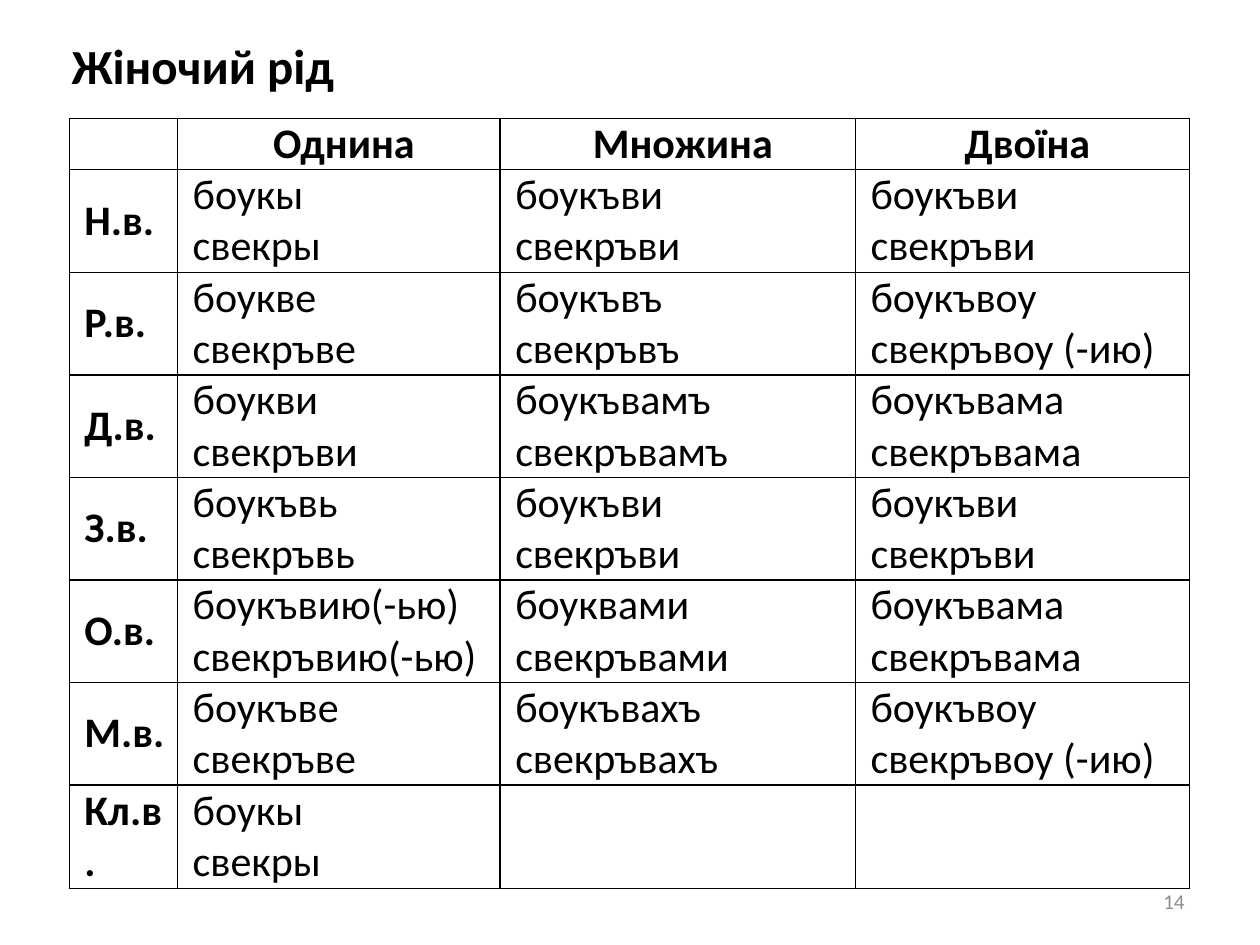
from lxml.etree import SubElement
from pptx import Presentation
from pptx.dml.color import RGBColor
from pptx.enum.text import MSO_ANCHOR, MSO_AUTO_SIZE, PP_ALIGN
from pptx.oxml.ns import qn
from pptx.util import Inches, Pt

BLACK = RGBColor(0, 0, 0)
GRAY = RGBColor(0x8C, 0x8C, 0x8C)
FONT = "Calibri"

COLUMN_WIDTHS = [0.86, 2.56, 2.82, 2.65]
HEADER_HEIGHT, ROW_HEIGHT, LAST_ROW_HEIGHT = 0.4, 0.8, 0.82

# A line break starts a new paragraph; a space lets the column wrap the pair.
DECLENSION = [
    ["", "Однина", "Множина", "Двоїна"],
    ["Н.в.", "боукы\nсвекры", "боукъви\nсвекръви", "боукъви свекръви"],
    ["Р.в.", "боукве\nсвекръве", "боукъвъ\nсвекръвъ", "боукъвоу свекръвоу (-ию)"],
    ["Д.в.", "боукви\nсвекръви", "боукъвамъ свекръвамъ", "боукъвама свекръвама"],
    ["З.в.", "боукъвь свекръвь", "боукъви\nсвекръви", "боукъви свекръви"],
    ["О.в.", "боукъвию(-ью) свекръвию(-ью)", "боуквами свекръвами",
     "боукъвама свекръвама"],
    ["М.в.", "боукъве свекръве", "боукъвахъ свекръвахъ", "боукъвоу свекръвоу (-ию)"],
    ["Кл.в.", "боукы\nсвекры", "", ""],
]


def write_text(frame, text, size, color=BLACK, bold=False, align=PP_ALIGN.LEFT, indent=0):
    frame.text = text
    for para in frame.paragraphs:
        para.alignment = align
        para._p.get_or_add_pPr().set("marL", str(Inches(indent)))
        para.font.size = Pt(size)
        for span in para.runs:
            span.font.name = FONT
            span.font.size = Pt(size)
            span.font.bold = bold
            span.font.color.rgb = color


def draw_borders(cell, color=BLACK, width=1):
    properties = cell._tc.get_or_add_tcPr()
    for position, side in enumerate(("lnL", "lnR", "lnT", "lnB")):
        line = SubElement(properties, qn(f"a:{side}"), w=str(Pt(width)))
        fill = SubElement(line, qn("a:solidFill"))
        SubElement(fill, qn("a:srgbClr"), val=str(color))
        properties.insert(position, line)


def set_title(page, text):
    title = page.shapes.title
    title.left, title.top = Inches(0.47), Inches(0.23)
    title.width, title.height = Inches(2.58), Inches(0.57)
    frame = title.text_frame
    frame.auto_size = MSO_AUTO_SIZE.NONE
    frame.vertical_anchor = MSO_ANCHOR.TOP
    write_text(frame, text, 28, bold=True)


def add_declension_table(page, rows):
    heights = [HEADER_HEIGHT] + [ROW_HEIGHT] * (len(rows) - 2) + [LAST_ROW_HEIGHT]
    table = page.shapes.add_table(
        len(rows), len(COLUMN_WIDTHS), Inches(0.55), Inches(0.94),
        Inches(sum(COLUMN_WIDTHS)), Inches(sum(heights))).table
    table.horz_banding = False
    table.first_row = False
    for column, width in zip(table.columns, COLUMN_WIDTHS):
        column.width = Inches(width)
    for row, height in zip(table.rows, heights):
        row.height = Inches(height)
    for row_index, texts in enumerate(rows):
        for column_index, text in enumerate(texts):
            header = row_index == 0
            cell = table.cell(row_index, column_index)
            cell.margin_left = cell.margin_right = Inches(0.04)
            cell.margin_top = cell.margin_bottom = 0
            cell.vertical_anchor = MSO_ANCHOR.TOP if header else MSO_ANCHOR.MIDDLE
            cell.fill.background()
            draw_borders(cell)
            write_text(cell.text_frame, text, 24, bold=header or column_index == 0,
                       align=PP_ALIGN.CENTER if header else PP_ALIGN.LEFT, indent=0.08)


def add_page_number(page, number):
    box = page.shapes.add_textbox(Inches(7.17), Inches(6.95), Inches(2.33), Inches(0.4))
    frame = box.text_frame
    frame.word_wrap = True
    frame.vertical_anchor = MSO_ANCHOR.MIDDLE
    write_text(frame, str(number), 12, color=GRAY, align=PP_ALIGN.RIGHT)


def main():
    deck = Presentation()
    deck.slide_width, deck.slide_height = Inches(10), Inches(7.5)
    page = deck.slides.add_slide(deck.slide_layouts.get_by_name("Title Only"))
    set_title(page, "Жіночий рід")
    add_declension_table(page, DECLENSION)
    add_page_number(page, 14)
    deck.save("out.pptx")


if __name__ == "__main__":
    main()
